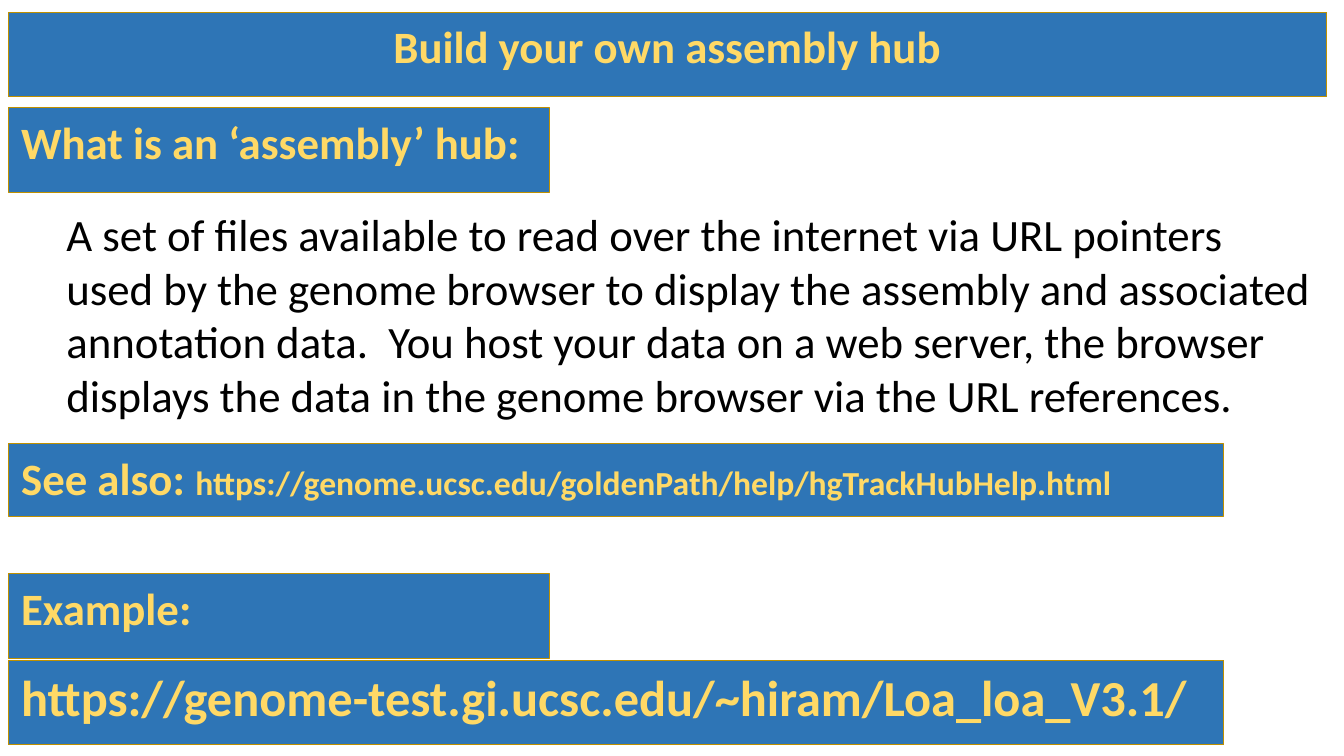
"""Build the slide that explains what an assembly hub is."""
from dataclasses import dataclass

from pptx import Presentation
from pptx.dml.color import RGBColor
from pptx.enum.shapes import MSO_SHAPE
from pptx.enum.text import MSO_ANCHOR, MSO_AUTO_SIZE, PP_ALIGN
from pptx.util import Emu, Pt

SCALE = 9144


def px(count):
    return Emu(count * SCALE)


@dataclass(frozen=True)
class Theme:
    face: str = "Calibri"
    blue: RGBColor = RGBColor(0x2E, 0x75, 0xB6)
    edge: RGBColor = RGBColor(0xBF, 0x90, 0x00)
    gold: RGBColor = RGBColor(0xFF, 0xD9, 0x66)
    ink: RGBColor = RGBColor(0, 0, 0)
    small: int = 24
    main: int = 32
    large: int = 36


class Deck:
    def __init__(self, theme):
        self.theme = theme
        self.file = Presentation()
        self.file.slide_width, self.file.slide_height = px(1333), px(750)
        self.slide = self.file.slides.add_slide(self.file.slide_layouts[5])

    def style(self, font, size, color, bold=False):
        font.name, font.size, font.bold = self.theme.face, Pt(size), bold
        font.color.rgb = color

    def band(self, shape, parts, align=PP_ALIGN.LEFT):
        shape.fill.solid()
        shape.fill.fore_color.rgb = self.theme.blue
        shape.line.color.rgb = self.theme.edge
        shape.line.width = Pt(0.75)
        frame = shape.text_frame
        frame.word_wrap = True
        frame.auto_size = MSO_AUTO_SIZE.NONE
        frame.vertical_anchor = MSO_ANCHOR.TOP
        frame.margin_left = frame.margin_right = px(13)
        frame.margin_top = frame.margin_bottom = px(13)
        line = frame.paragraphs[0]
        line.alignment = align
        line.line_spacing = 0.9
        line.space_after = Pt(21.3)
        sizes = {size for _, size in parts}
        self.style(line.font, parts[0][1], self.theme.gold, True)
        for text, size in parts:
            run = line.add_run()
            run.text = text
            if len(sizes) > 1:
                run.font.size = Pt(size)

    def title(self, text, left, top, width, height):
        shape = self.slide.shapes.title
        shape.left, shape.top = px(left), px(top)
        shape.width, shape.height = px(width), px(height)
        self.band(shape, [(text, self.theme.main)], PP_ALIGN.CENTER)

    def label(self, parts, left, top, width, height):
        shape = self.slide.shapes.add_shape(
            MSO_SHAPE.RECTANGLE, px(left), px(top), px(width), px(height))
        shape.shadow.inherit = False
        self.band(shape, parts)

    def prose(self, lines, left, top, width, height):
        box = self.slide.shapes.add_textbox(
            px(left), px(top), px(width), px(height))
        frame = box.text_frame
        frame.word_wrap = True
        frame.auto_size = MSO_AUTO_SIZE.SHAPE_TO_FIT_TEXT
        frame.text = "\n".join(lines)
        for line in frame.paragraphs:
            self.style(line.font, self.theme.main, self.theme.ink)

    def save(self):
        self.file.save("out.pptx")


def main():
    theme = Theme()
    deck = Deck(theme)
    left, short, wide, high = 8, 537, 1206, 84
    deck.title("Build your own assembly hub", left, 12, 1308, high)
    deck.label([("What is an ‘assembly’ hub:", theme.main)],
               left, 107, short, high)
    deck.prose([
        "A set of files available to read over the internet via URL pointers",
        "used by the genome browser to display the assembly and associated "
        "annotation data.  You host your data on a web server, the browser "
        "displays the data in the genome browser via the URL references.",
    ], 56, 200, 1259, 226)
    deck.label([("https://genome-test.gi.ucsc.edu/~hiram/Loa_loa_V3.1/",
                 theme.large)], left, 655, wide, high)
    deck.label([("Example:", theme.main)], left, 569, short, high)
    deck.label([
        ("See also: ", theme.main),
        ("https://genome.ucsc.edu/goldenPath/help/hgTrackHubHelp.html",
         theme.small),
    ], left, 440, wide, 72)
    deck.save()


if __name__ == "__main__":
    main()
